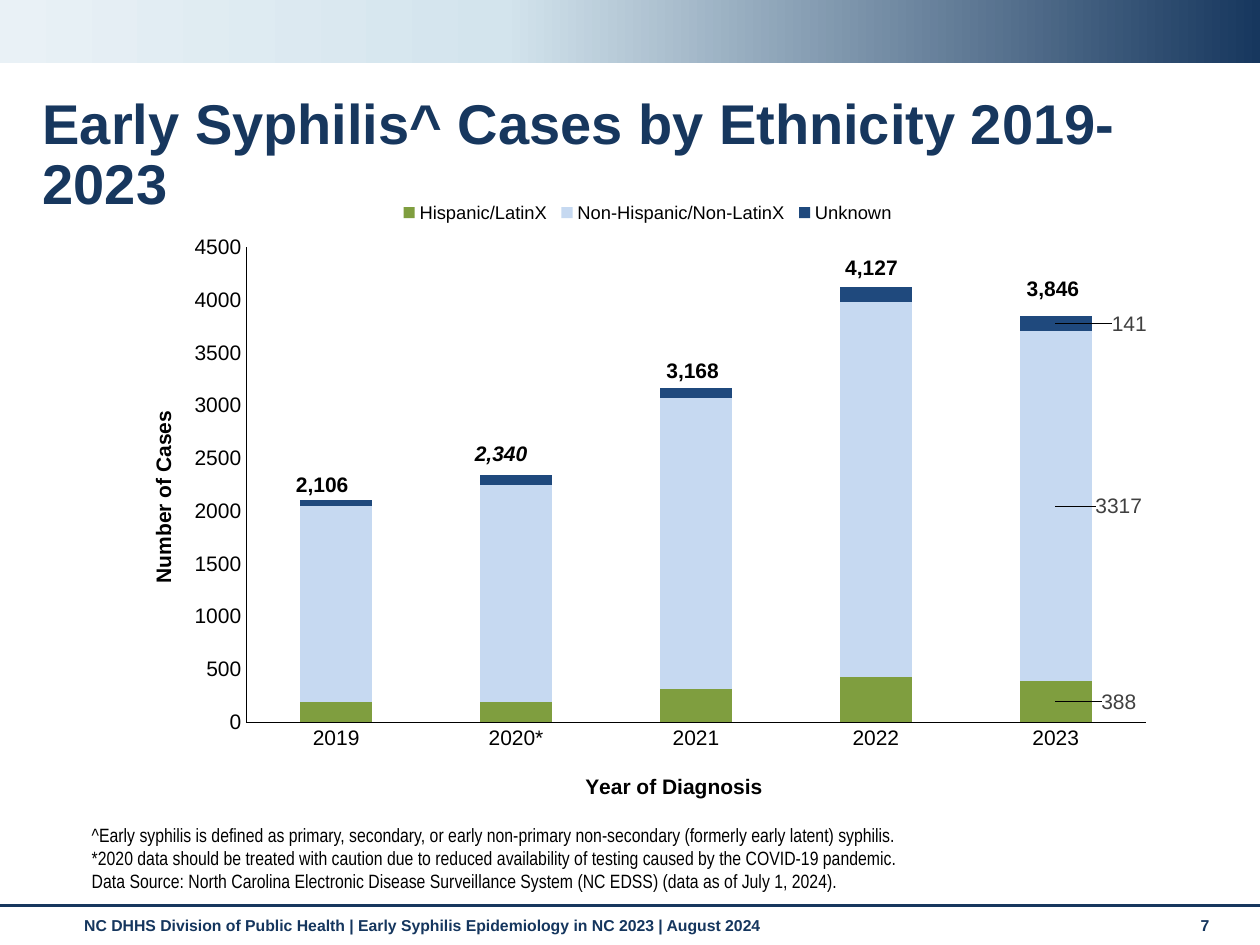
from copy import deepcopy
from dataclasses import dataclass

from lxml.etree import SubElement
from pptx import Presentation
from pptx.chart.data import CategoryChartData
from pptx.dml.color import RGBColor
from pptx.enum.chart import XL_CHART_TYPE, XL_LABEL_POSITION, XL_LEGEND_POSITION, XL_TICK_MARK
from pptx.enum.shapes import MSO_CONNECTOR, MSO_SHAPE
from pptx.enum.text import MSO_ANCHOR
from pptx.oxml import parse_xml
from pptx.oxml.ns import nsdecls, qn
from pptx.util import Inches, Pt

NAVY = "17375E"
FOOTER_NAVY = "15365E"
BLACK = "000000"
LABEL_GREY = "404040"
NUMBER_FORMAT = "########0"
YEARS = ["2019", "2020*", "2021", "2022", "2023"]


@dataclass
class TextStyle:
    size: float
    color: str = BLACK
    bold: bool = False
    italic: bool = False
    font: str = "Arial"


@dataclass
class EthnicGroup:
    name: str
    cases: list[int]
    color: str
    label_shift: float


@dataclass
class YearTotal:
    cases: str
    left: float
    top: float
    italic: bool = False


GROUPS = [
    EthnicGroup("Hispanic/LatinX", [189, 192, 316, 430, 388], "7F9E3F", 0.06),
    EthnicGroup("Non-Hispanic/Non-LatinX", [1859, 2054, 2757, 3554, 3317], "C6D9F1", 0.06),
    EthnicGroup("Unknown", [58, 94, 95, 143, 141], "1F497D", 0.07),
]
TOTALS = [
    YearTotal("2,106", 2.25, 3.69),
    YearTotal("2,340", 3.67, 3.45, italic=True),
    YearTotal("3,168", 5.19, 2.79),
    YearTotal("4,127", 6.61, 1.97),
    YearTotal("3,846", 8.05, 2.14),
]
FOOTNOTES = [
    "^Early syphilis is defined as primary, secondary, or early non-primary non-secondary (formerly early latent) syphilis.",
    "*2020 data should be treated with caution due to reduced availability of testing caused by the COVID-19 pandemic.",
    "Data Source: North Carolina Electronic Disease Surveillance System (NC EDSS) (data as of July 1, 2024).",
]


def rgb(color: str) -> RGBColor:
    return RGBColor.from_string(color)


def style_font(font, style: TextStyle) -> None:
    font.name = style.font
    font.size = Pt(style.size)
    font.bold = style.bold
    font.italic = style.italic
    font.color.rgb = rgb(style.color)


def add_text(slide, lines: list[str], left: float, top: float, width: float, height: float,
             style: TextStyle, anchor=MSO_ANCHOR.TOP, spacing: float = 1.0) -> None:
    frame = slide.shapes.add_textbox(Inches(left), Inches(top), Inches(width), Inches(height)).text_frame
    frame.word_wrap = True
    frame.vertical_anchor = anchor
    for index, line in enumerate(lines):
        paragraph = frame.add_paragraph() if index else frame.paragraphs[0]
        paragraph.line_spacing = spacing
        run = paragraph.add_run()
        run.text = line
        style_font(run.font, style)


def add_banner(slide) -> None:
    banner = slide.shapes.add_shape(MSO_SHAPE.RECTANGLE, 0, 0, Inches(10), Inches(0.5))
    banner.shadow.inherit = False
    banner.line.fill.background()
    banner.fill.gradient()
    banner.fill.gradient_angle = 180
    stop_list = banner._element.spPr.find(qn("a:gradFill")).find(qn("a:gsLst"))
    stop_list.append(deepcopy(stop_list[-1]))
    stops = [(0, NAVY), (0.6, "D3E4ED"), (1, "E9F1F6")]
    for stop, (position, color) in zip(banner.fill.gradient_stops, stops):
        stop.position = position
        stop.color.rgb = rgb(color)


def add_footer_rule(slide) -> None:
    rule = slide.shapes.add_connector(MSO_CONNECTOR.STRAIGHT, 0, Inches(7.19), Inches(10), Inches(7.19))
    rule.line.color.rgb = rgb(NAVY)
    rule.line.width = Pt(1.75)
    SubElement(rule._element.spPr, qn("a:effectLst"))


def set_layout(part, index: int, inner: bool = False, edge: bool = True, **fractions: float) -> None:
    for old in part.findall(qn("c:layout")):
        part.remove(old)
    settings = '<c:layoutTarget val="inner"/>' if inner else ""
    if edge:
        settings += '<c:xMode val="edge"/><c:yMode val="edge"/>'
    settings += "".join(f'<c:{key} val="{value}"/>' for key, value in fractions.items())
    part.insert(index, parse_xml(
        f'<c:layout {nsdecls("c")}><c:manualLayout>{settings}</c:manualLayout></c:layout>'))


def style_axis(axis, title: str, x: float, y: float) -> None:
    axis.major_tick_mark = axis.minor_tick_mark = XL_TICK_MARK.NONE
    axis.has_major_gridlines = False
    style_font(axis.tick_labels.font, TextStyle(12))
    axis.format.line.color.rgb = rgb(BLACK)
    axis.format.line.width = Pt(0.75)
    run = axis.axis_title.text_frame.paragraphs[0].add_run()
    run.text = title
    style_font(run.font, TextStyle(12, bold=True))
    set_layout(axis.axis_title._element, 1, x=x, y=y)


def style_series(series, group: EthnicGroup) -> None:
    series.format.fill.solid()
    series.format.fill.fore_color.rgb = rgb(group.color)
    series.data_labels.show_value = False
    series.data_labels.number_format = NUMBER_FORMAT
    series.data_labels.number_format_is_linked = False
    last_label = series.points[len(YEARS) - 1].data_label
    style_font(last_label.font, TextStyle(12, LABEL_GREY))
    last_label.position = XL_LABEL_POSITION.CENTER
    set_layout(series._element.xpath(".//c:dLbl")[0], 1, edge=False, x=group.label_shift, y=0)


def add_cases_chart(slide) -> None:
    data = CategoryChartData(number_format=NUMBER_FORMAT)
    data.categories = YEARS
    for group in GROUPS:
        data.add_series(group.name, group.cases)
    chart = slide.shapes.add_chart(XL_CHART_TYPE.COLUMN_STACKED, Inches(0.92), Inches(1.46),
                                   Inches(8.34), Inches(5.04), data).chart
    style_font(chart.font, TextStyle(10))
    chart.has_title = False
    set_layout(chart._chartSpace.chart.plotArea, 0, inner=True, x=0.124, y=0.1, w=0.856, h=0.748)

    chart.has_legend = True
    chart.legend.position = XL_LEGEND_POSITION.TOP
    chart.legend.include_in_layout = False
    style_font(chart.legend.font, TextStyle(10.5))
    set_layout(chart.legend._element, 1, x=0.266, y=0.02, w=0.48, h=0.05)

    style_axis(chart.category_axis, "Year of Diagnosis", 0.443, 0.923)
    case_axis = chart.value_axis
    style_axis(case_axis, "Number of Cases", 0.029, 0.351)
    case_axis.axis_title.text_frame._txBody.bodyPr.set("rot", "-5400000")
    case_axis.minimum_scale, case_axis.maximum_scale, case_axis.major_unit = 0, 4500, 500
    case_axis.tick_labels.number_format = NUMBER_FORMAT
    case_axis.tick_labels.number_format_is_linked = False

    plot = chart.plots[0]
    plot.vary_by_categories = False
    plot.gap_width = 150
    plot.overlap = 100
    for series, group in zip(plot.series, GROUPS):
        style_series(series, group)


def main() -> None:
    deck = Presentation()
    deck.slide_width, deck.slide_height = Inches(10), Inches(7.5)
    slide = deck.slides.add_slide(deck.slide_layouts[6])
    footer_style = TextStyle(9, FOOTER_NAVY, bold=True)
    add_text(slide, ["NC DHHS Division of Public Health | Early Syphilis Epidemiology in NC 2023 | August 2024"],
             0.57, 7.22, 8.74, 0.29, footer_style)
    add_text(slide, ["7"], 9.43, 7.22, 0.44, 0.3, footer_style)
    add_banner(slide)
    add_footer_rule(slide)
    add_text(slide, ["Early Syphilis^ Cases by Ethnicity 2019-2023"], 0.24, 0.71, 9.7, 0.6,
             TextStyle(32, NAVY, bold=True), spacing=0.9)
    add_text(slide, FOOTNOTES, 0.63, 6.5, 8.74, 0.63, TextStyle(11, font="Arial Narrow"), MSO_ANCHOR.BOTTOM)
    add_cases_chart(slide)
    for total in TOTALS:
        add_text(slide, [total.cases], total.left, total.top, 0.72, 0.3,
                 TextStyle(12, bold=True, italic=total.italic))
    deck.save("out.pptx")


if __name__ == "__main__":
    main()
